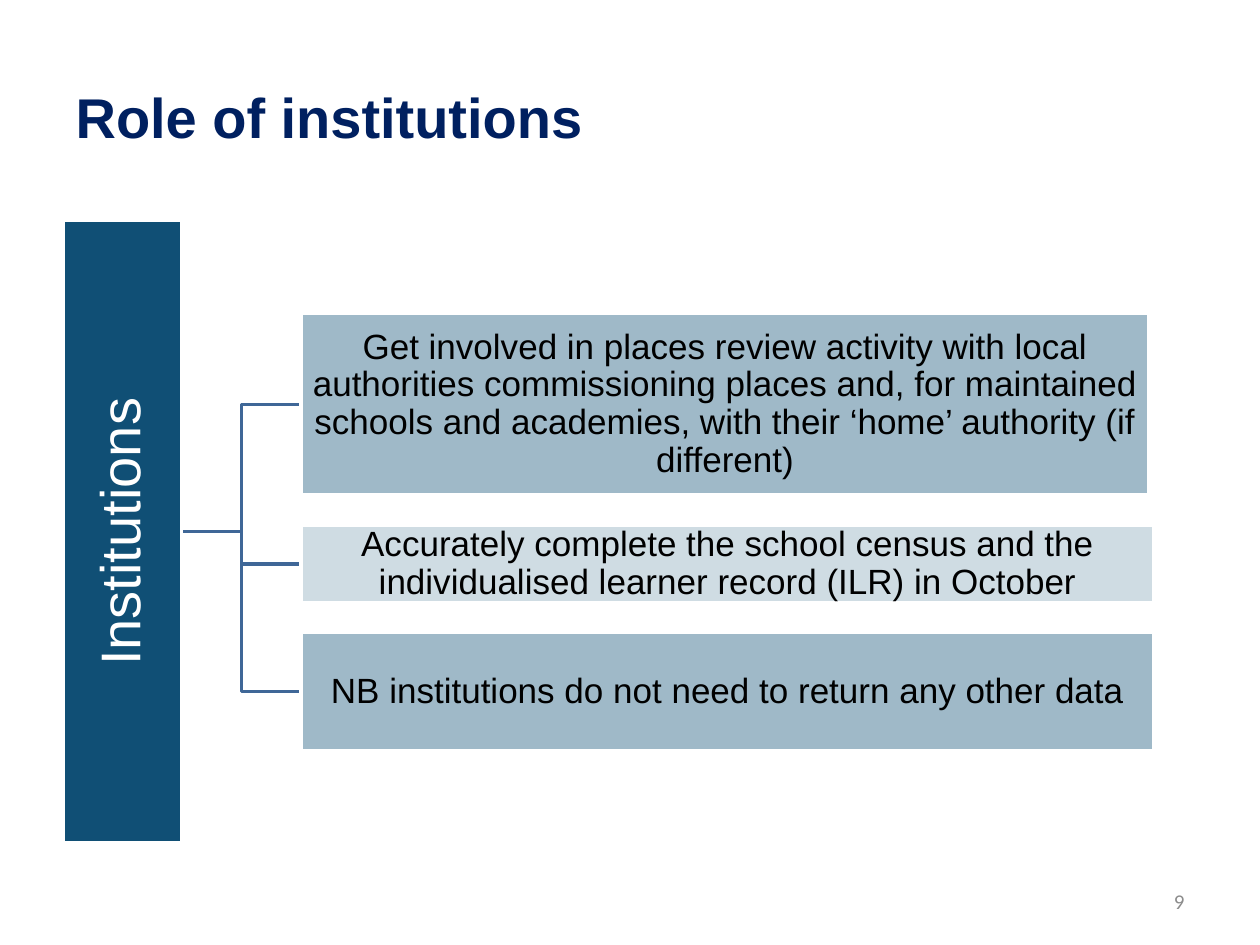
from pptx import Presentation, util as u
from pptx.dml import color
from pptx.enum import shapes, text

COLORS = {"title": "002060", "stem": "104F75", "dark": "9FB9C8", "light": "CFDCE3",
          "branch": "3F6797", "white": "FFFFFF", "black": "000000", "number": "8C8C8C"}
COLUMNS, ROWS = 100, 75


class Deck:
    def __init__(self):
        self.prs = Presentation()
        self.prs.slide_width, self.prs.slide_height = u.Inches(10), u.Inches(7.5)
        self.slide = self.prs.slides.add_slide(self.prs.slide_layouts[5])

    def grid(self, column, row):
        return (u.Emu(round(column * self.prs.slide_width / COLUMNS)),
                u.Emu(round(row * self.prs.slide_height / ROWS)))

    def area(self, left, top, width, height):
        return *self.grid(left, top), *self.grid(width, height)

    def rgb(self, key):
        return color.RGBColor.from_string(COLORS[key])

    def label(self, frame, words, ink, align, inset=None, spacing=None, **font):
        frame.word_wrap = True
        frame.vertical_anchor = text.MSO_ANCHOR.MIDDLE
        if inset is not None:
            for side in ("left", "top", "right", "bottom"):
                setattr(frame, f"margin_{side}", u.Inches(inset))
        line = frame.paragraphs[0]
        line.alignment, line.line_spacing = align, spacing
        run = line.add_run()
        run.text = words
        for name, value in font.items():
            setattr(run.font, name, value)
        run.font.color.rgb = self.rgb(ink)

    def outline(self, shape, ink):
        shape.shadow.inherit = False
        shape.line.color.rgb = self.rgb(ink)
        shape.line.width = u.Pt(2)

    def title(self, words, area):
        heading = self.slide.shapes.title
        for name, value in zip(("left", "top", "width", "height"), self.area(*area)):
            setattr(heading, name, value)
        self.label(heading.text_frame, words, "title", text.PP_ALIGN.LEFT,
                   name="Arial", size=u.Pt(32), bold=True)

    def box(self, words, area, fill, ink, size, inset, rotation=0):
        box = self.slide.shapes.add_shape(shapes.MSO_SHAPE.RECTANGLE, *self.area(*area))
        box.rotation = rotation
        box.fill.solid()
        box.fill.fore_color.rgb = self.rgb(fill)
        self.outline(box, "white")
        self.label(box.text_frame, words, ink, text.PP_ALIGN.CENTER, inset, 0.9,
                   name="Arial", size=u.Pt(size))

    def branch(self, start, end):
        middle = (start[0] + end[0]) / 2
        elbow = [self.grid(*p) for p in (start, (middle, start[1]), (middle, end[1]), end)]
        builder = self.slide.shapes.build_freeform(*elbow[0])
        builder.add_line_segments(elbow[1:], close=False)
        branch = builder.convert_to_shape()
        branch.fill.background()
        self.outline(branch, "branch")

    def page_number(self, words, area):
        number = self.slide.shapes.add_textbox(*self.area(*area))
        self.label(number.text_frame, words, "number", text.PP_ALIGN.RIGHT,
                   name="Calibri", size=u.Pt(12))


def main():
    deck = Deck()
    deck.title("Role of institutions", (5, 3, 90, 12.5))

    duties = [
        ("Get involved in places review activity with local authorities commissioning places "
         "and, for maintained schools and academies, with their ‘home’ authority (if different)",
         67.3, 14.4, "dark"),
        ("Accurately complete the school census and the individualised learner record (ILR) "
         "in October", 67.7, 6.2, "light"),
        ("NB institutions do not need to return any other data", 67.7, 9.4, "dark"),
    ]
    left, top, gap = 23.9, 24.9, 2.35
    stem_length, stem_width = 49.4, 9.4
    stem_x, stem_y = 9.7, 42.2
    fork = (stem_x + stem_width / 2, stem_y)

    for words, width, height, fill in duties:
        deck.branch(fork, (left, top + height / 2))
        deck.box(words, (left, top, width, height), fill, "black", 20, 0.01)
        top += height + gap

    deck.box("Institutions",
             (stem_x - stem_length / 2, stem_y - stem_width / 2, stem_length, stem_width),
             "stem", "white", 32, 0.02, rotation=270)
    deck.page_number("9", (71.7, 69.5, 23.3, 4))
    deck.prs.save("out.pptx")


if __name__ == "__main__":
    main()
